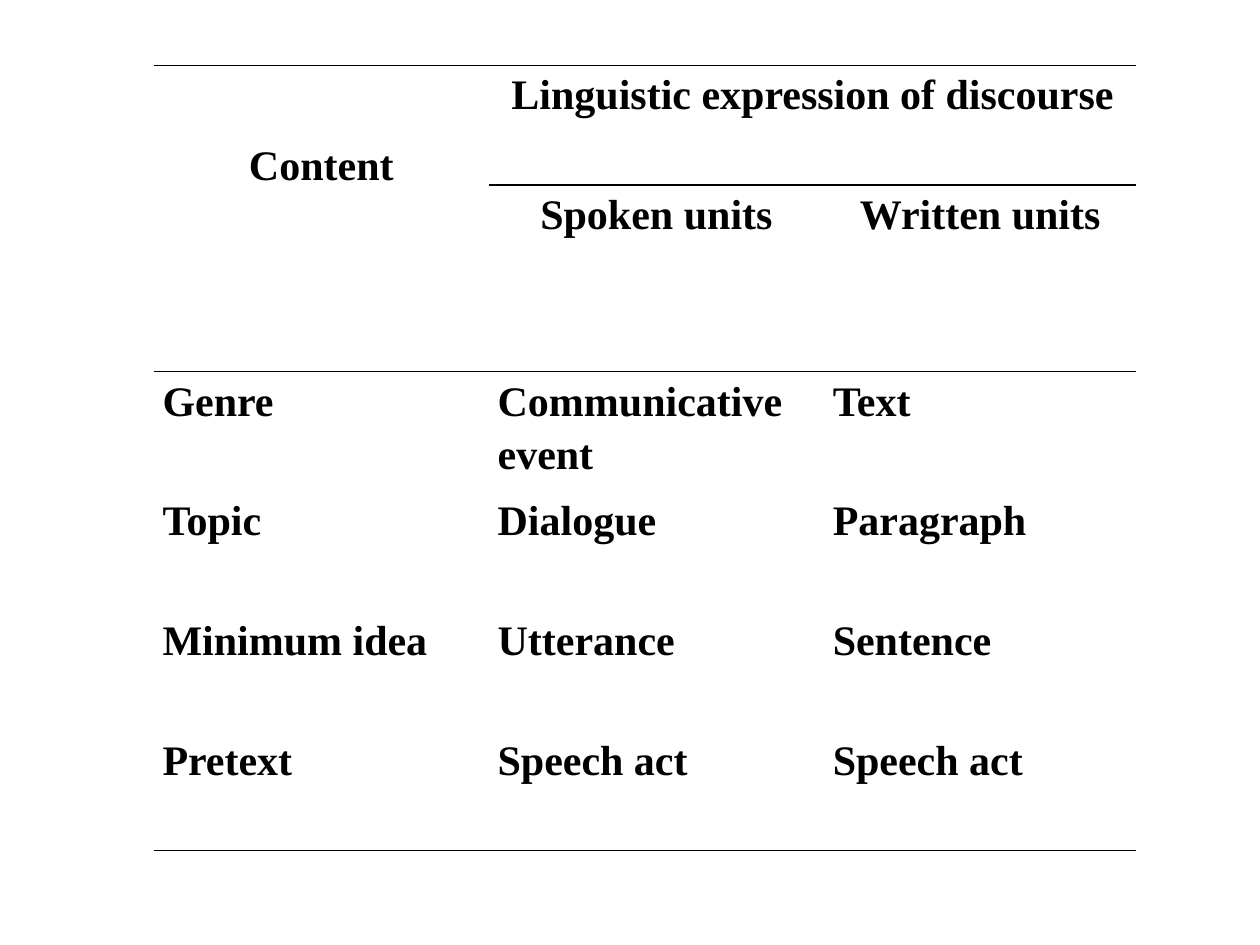
from lxml.etree import SubElement
from pptx import Presentation
from pptx.dml.color import RGBColor
from pptx.enum.text import PP_ALIGN
from pptx.oxml.ns import qn
from pptx.util import Inches, Pt

COLORS = {"ink": "000000"}
COLUMN_WIDTHS = [2.66, 2.66, 2.48]
ROW_HEIGHTS = [0.95, 1.48, 0.95, 0.95, 0.95, 0.95]
HEADER_ROWS = 2
ROWS = [
    ["Content", "Linguistic expression of discourse", ""],
    ["", "Spoken units", "Written units"],
    ["Genre", "Communicative event", "Text"],
    ["Topic", "Dialogue", "Paragraph"],
    ["Minimum idea", "Utterance", "Sentence"],
    ["Pretext", "Speech act", "Speech act"],
]
# Rows with a rule above or below them
RULED_TOP = {0, 1, 2}
RULED_BOTTOM = {0, 1, len(ROWS) - 1}


class SlideBuilder:
    font = "Times New Roman"
    size = Pt(24)
    rule_width = Pt(1)

    def __init__(self, slide):
        self.slide = slide

    def text(self, cell, words, alignment):
        para = cell.text_frame.paragraphs[0]
        para.alignment = alignment
        para.line_spacing = 1.15
        para.space_after = Pt(10)
        span = para.add_run()
        span.text = words
        span.font.name = self.font
        span.font.size = self.size
        span.font.bold = True
        span.font.color.rgb = RGBColor.from_string(COLORS["ink"])

    def borders(self, cell, ruled_sides):
        properties = cell._tc.get_or_add_tcPr()
        for side in ("L", "R", "T", "B"):
            line = SubElement(properties, qn(f"a:ln{side}"), w=str(self.rule_width))
            if side in ruled_sides:
                fill = SubElement(line, qn("a:solidFill"))
                SubElement(fill, qn("a:srgbClr"), val=COLORS["ink"])
            else:
                SubElement(line, qn("a:noFill"))

    def table(self, left, top):
        frame = self.slide.shapes.add_table(
            len(ROWS), len(COLUMN_WIDTHS), Inches(left), Inches(top),
            Inches(sum(COLUMN_WIDTHS)), Inches(sum(ROW_HEIGHTS)))
        table = frame.table
        table.first_row = table.horz_banding = False
        for column, width in zip(table.columns, COLUMN_WIDTHS):
            column.width = Inches(width)
        for row, height in zip(table.rows, ROW_HEIGHTS):
            row.height = Inches(height)

        # Header spans
        table.cell(0, 0).merge(table.cell(1, 0))
        table.cell(0, 1).merge(table.cell(0, 2))

        # Cell text, rules and fills
        for r, row in enumerate(ROWS):
            alignment = PP_ALIGN.CENTER if r < HEADER_ROWS else PP_ALIGN.JUSTIFY
            for c, words in enumerate(row):
                cell = table.cell(r, c)
                cell.margin_left = cell.margin_right = Inches(0.07)
                cell.margin_top = cell.margin_bottom = 0
                sides = ("T" if r in RULED_TOP else "") + ("B" if r in RULED_BOTTOM else "")
                if c == 0 and r < HEADER_ROWS:
                    sides = "TB" if r == 0 else "B"
                self.borders(cell, sides)
                cell.fill.background()
                if words:
                    self.text(cell, words, alignment)

        # "Content" sits one line lower in its tall cell
        table.cell(0, 0).margin_top = Inches(0.56)


def main():
    deck = Presentation()
    deck.slide_width, deck.slide_height = Inches(10), Inches(7.5)
    page = SlideBuilder(deck.slides.add_slide(deck.slide_layouts[6]))
    page.table(1.22, 0.52)
    deck.save("out.pptx")


if __name__ == "__main__":
    main()
